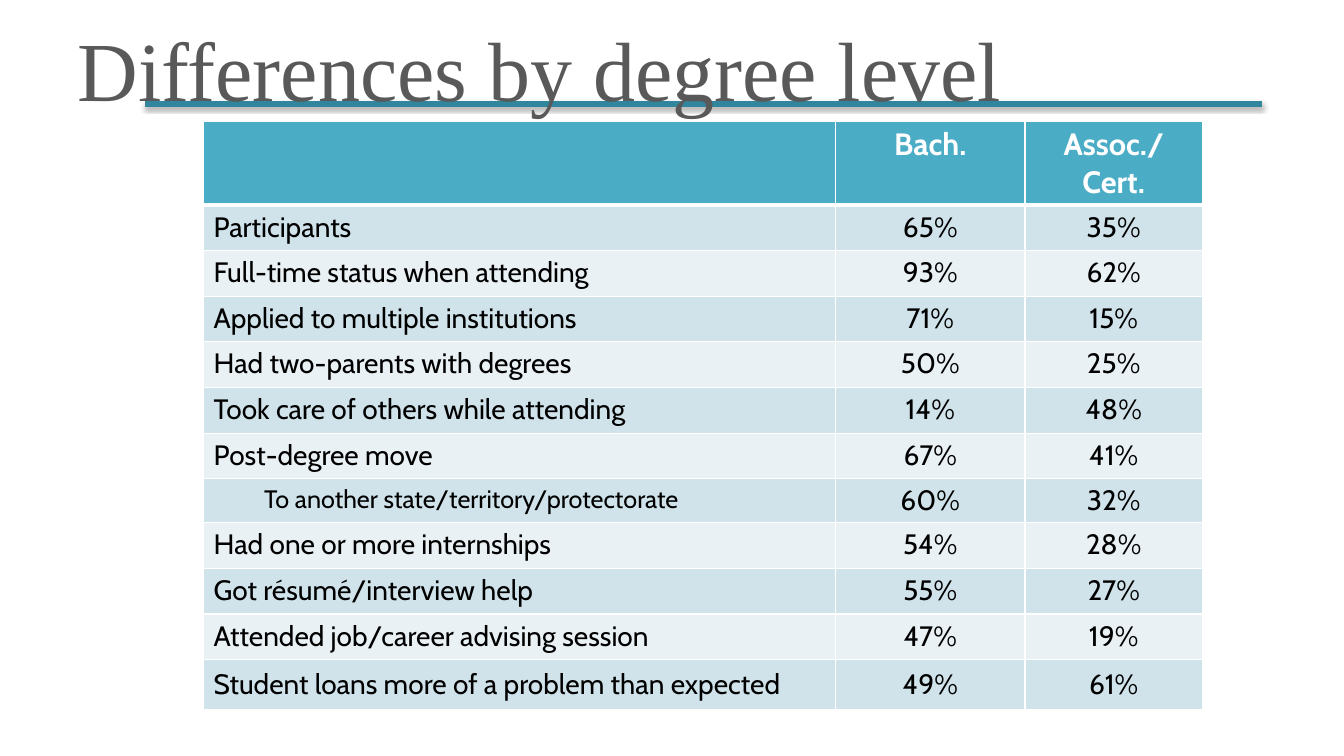
from lxml import etree
from pptx import Presentation
from pptx.dml.color import RGBColor
from pptx.enum.shapes import MSO_CONNECTOR as CONN
from pptx.enum.text import MSO_ANCHOR as ANCHOR, PP_ALIGN as ALIGN
from pptx.oxml import parse_xml
from pptx.oxml.ns import nsdecls, qn
from pptx.util import Pt


def rgb(color):
    return RGBColor.from_string(color)


def add_borders(cell, bottom):
    tcPr = cell._tc.get_or_add_tcPr()
    for side, width in (("L", 1), ("R", 1), ("T", 1), ("B", bottom)):
        ln = etree.SubElement(tcPr, qn(f"a:ln{side}"), w=str(Pt(width)))
        fill = etree.SubElement(ln, qn("a:solidFill"))
        etree.SubElement(fill, qn("a:srgbClr"), val="FFFFFF")


prs = Presentation()
prs.slide_width, prs.slide_height = Pt(960), Pt(540)
s = prs.slides.add_slide(prs.slide_layouts[6])

# Rule under the title, with a soft shadow
rule = s.shapes.add_connector(CONN.STRAIGHT, Pt(103.7), Pt(74.2), Pt(901.4), Pt(74.2))
rule.line.color.rgb = rgb("31859C")
rule.line.width = Pt(4.5)
rule._element.spPr.append(parse_xml(
    f'<a:effectLst {nsdecls("a")}>'
    f'<a:outerShdw blurRad="{Pt(3.1)}" dist="{Pt(1.6)}" dir="5400000" rotWithShape="0">'
    '<a:srgbClr val="000000"><a:alpha val="38000"/></a:srgbClr>'
    '</a:outerShdw></a:effectLst>'))

# Title
title = s.shapes.add_textbox(Pt(48.2), Pt(3.6), Pt(911.8), Pt(90))
tf = title.text_frame
tf.word_wrap = True
tf.vertical_anchor = ANCHOR.MIDDLE
p = tf.paragraphs[0]
p.text = "Differences by degree level"
p.font.name, p.font.size = "Times New Roman", Pt(60)
p.font.color.rgb = rgb("595959")

# Table
SUB_ROW = "To another state/territory/protectorate"
LAST_ROW = "Student loans more of a problem than expected"
rows = [
    ("", "Bach.", "Assoc./Cert."),
    ("Participants", "65%", "35%"),
    ("Full-time status when attending", "93%", "62%"),
    ("Applied to multiple institutions", "71%", "15%"),
    ("Had two-parents with degrees", "50%", "25%"),
    ("Took care of others while attending", "14%", "48%"),
    ("Post-degree move", "67%", "41%"),
    (SUB_ROW, "60%", "32%"),
    ("Had one or more internships", "54%", "28%"),
    ("Got résumé/interview help", "55%", "27%"),
    ("Attended job/career advising session", "47%", "19%"),
    (LAST_ROW, "49%", "61%"),
]
heights = [60] + [32.6] * 11
heights[7], heights[11] = 31.4, 35.8
widths = (451.4, 135.4, 126.7)
table = s.shapes.add_table(len(rows), 3, Pt(145.4), Pt(86.4),
                           Pt(sum(widths)), Pt(sum(heights))).table
for column, width in zip(table.columns, widths):
    column.width = Pt(width)

for i, (row, height) in enumerate(zip(rows, heights)):
    table.rows[i].height = Pt(height)
    header = i == 0
    for j, text in enumerate(row):
        cell = table.cell(i, j)
        add_borders(cell, 3 if header else 1)
        cell.fill.solid()
        cell.fill.fore_color.rgb = rgb("4BACC6" if header else ("E9F1F5", "D0E3EA")[i % 2])
        if row[0] == LAST_ROW or (row[0] == SUB_ROW and j > 0):
            cell.vertical_anchor = ANCHOR.MIDDLE
        p = cell.text_frame.paragraphs[0]
        p.text = text
        p.alignment = ALIGN.CENTER if j else ALIGN.LEFT
        if text == SUB_ROW:
            p._p.get_or_add_pPr().set("marL", str(Pt(36)))
        p.font.name = "Cabin"
        p.font.size = Pt(22 if header else 18 if text == SUB_ROW else 20)
        p.font.bold = header
        p.font.color.rgb = rgb("FFFFFF" if header else "000000")

prs.save("out.pptx")
